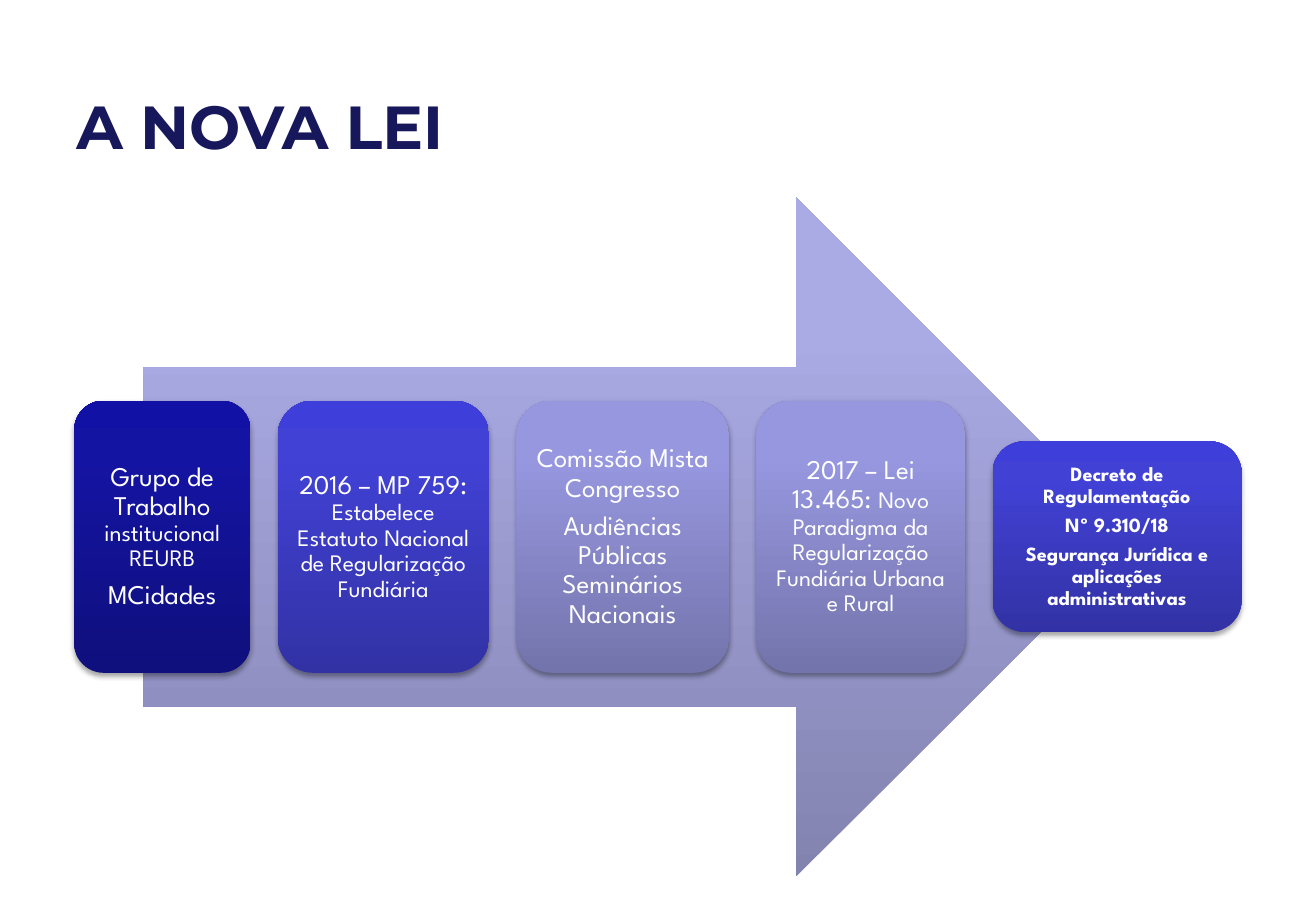
from copy import deepcopy
from dataclasses import dataclass

from lxml.etree import SubElement
from pptx import Presentation
from pptx.dml.color import RGBColor
from pptx.enum.shapes import MSO_SHAPE
from pptx.enum.text import MSO_ANCHOR, MSO_AUTO_SIZE, PP_ALIGN
from pptx.oxml.ns import qn
from pptx.util import Pt


@dataclass(frozen=True)
class Theme:
    heading_font: str = "Montserrat"
    body_font: str = "League Spartan"
    heading_color: str = "17175C"
    text_color: str = "FFFFFF"
    arrow: tuple = ("8383B0", "AAAAE4", "AAAAE7")
    navy: tuple = ("0F0F7D", "1414A3", "1111A6")
    blue: tuple = ("3232A5", "4141D6", "3E3EDA")
    lilac: tuple = ("7474AC", "9797E0", "9696E2")
    heading: int = 36
    large: int = 16
    medium: int = 14
    small: int = 12


class SlideBuilder:
    def __init__(self, page, theme):
        self.page = page
        self.theme = theme

    def apply(self, target, values):
        for name, value in values.items():
            setattr(target, name, value)

    def add_span(self, para, text, font, size, color, bold=False):
        span = para.add_run()
        span.text = text
        self.apply(span.font, {"name": font, "size": Pt(size), "bold": bold})
        span.font.color.rgb = RGBColor.from_string(color)

    def add_gradient_shape(self, kind, left, top, width, height, colors):
        shape = self.page.shapes.add_shape(kind, Pt(left), Pt(top), Pt(width), Pt(height))
        shape.shadow.inherit = False
        shape.line.fill.background()
        shape.fill.gradient()
        shape.fill.gradient_angle = 90
        stop_list = next(shape._element.spPr.iter(qn("a:gsLst")))
        stop_list.insert(1, deepcopy(stop_list[0]))
        for stop, position, color in zip(shape.fill.gradient_stops, (0, 0.8, 1), colors):
            stop.position = position
            stop.color.rgb = RGBColor.from_string(color)
        return shape

    def add_shadow(self, shape):
        effects = shape._element.spPr.find(qn("a:effectLst"))
        shadow = SubElement(effects, qn("a:outerShdw"), {
            "blurRad": str(Pt(3.1)), "dist": str(Pt(1.8)),
            "dir": "5400000", "rotWithShape": "0",
        })
        color = SubElement(shadow, qn("a:srgbClr"), val="000000")
        SubElement(color, qn("a:alpha"), val="35000")

    def add_card(self, left, top, width, height, colors, paragraphs, inset, bold):
        card = self.add_gradient_shape(
            MSO_SHAPE.ROUNDED_RECTANGLE, left, top, width, height, colors)
        self.add_shadow(card)
        box = card.text_frame
        margins = ("margin_left", "margin_top", "margin_right", "margin_bottom")
        self.apply(box, dict.fromkeys(margins, Pt(inset)))
        self.apply(box, {"word_wrap": True, "vertical_anchor": MSO_ANCHOR.MIDDLE})
        for index, spans in enumerate(paragraphs):
            para = box.add_paragraph() if index else box.paragraphs[0]
            self.apply(para, {
                "alignment": PP_ALIGN.CENTER, "line_spacing": 0.9,
                "space_before": Pt(0), "space_after": Pt(0.35 * spans[0][1]),
            })
            for text, size in spans:
                self.add_span(para, text, self.theme.body_font, size,
                              self.theme.text_color, bold)

    def add_title(self, text, left, top, width, height):
        box = self.page.shapes.add_textbox(Pt(left), Pt(top), Pt(width), Pt(height)).text_frame
        self.apply(box, {"word_wrap": True, "auto_size": MSO_AUTO_SIZE.SHAPE_TO_FIT_TEXT})
        self.add_span(box.paragraphs[0], text, self.theme.heading_font,
                      self.theme.heading, self.theme.heading_color, True)


def main():
    theme = Theme()
    deck = Presentation()
    deck.slide_width, deck.slide_height = Pt(780), Pt(540)
    builder = SlideBuilder(deck.slides.add_slide(deck.slide_layouts[6]), theme)

    middle = 318.2
    arrow_height = 402.5
    builder.add_gradient_shape(MSO_SHAPE.RIGHT_ARROW, 85, middle - arrow_height / 2,
                               588.2, arrow_height, theme.arrow)

    large, medium, small = theme.large, theme.medium, theme.small
    steps = [
        (104.4, 161.3, theme.navy, 5, False, [
            [("Grupo de Trabalho ", large), ("institucional REURB", medium)],
            [("MCidades", large)],
        ]),
        (125.3, 161.3, theme.blue, 5, False, [
            [("2016 – MP 759: ", large),
             ("Estabelece Estatuto Nacional de Regularização Fundiária", medium)],
        ]),
        (126, 161.3, theme.lilac, 5, False, [
            [("Comissão Mista Congresso", large)],
            [("Audiências Públicas Seminários Nacionais", large)],
        ]),
        (123.8, 161.3, theme.lilac, 5, False, [
            [("2017 – Lei 13.465: ", large),
             ("Novo Paradigma da Regularização Fundiária Urbana e Rural", medium)],
        ]),
        (147.6, 113, theme.blue, 3.6, True, [
            [("Decreto de Regulamentação", small)],
            [("Nº 9.310/18", small)],
            [("Segurança Jurídica e aplicações administrativas", small)],
        ]),
    ]
    left, gap = 44, 16.2
    for width, height, colors, inset, bold, paragraphs in steps:
        builder.add_card(left, middle - height / 2, width, height,
                         colors, paragraphs, inset, bold)
        left += width + gap

    builder.add_title("A NOVA LEI", 38.2, 49, 408.2, 51.1)
    deck.save("out.pptx")


if __name__ == "__main__":
    main()
